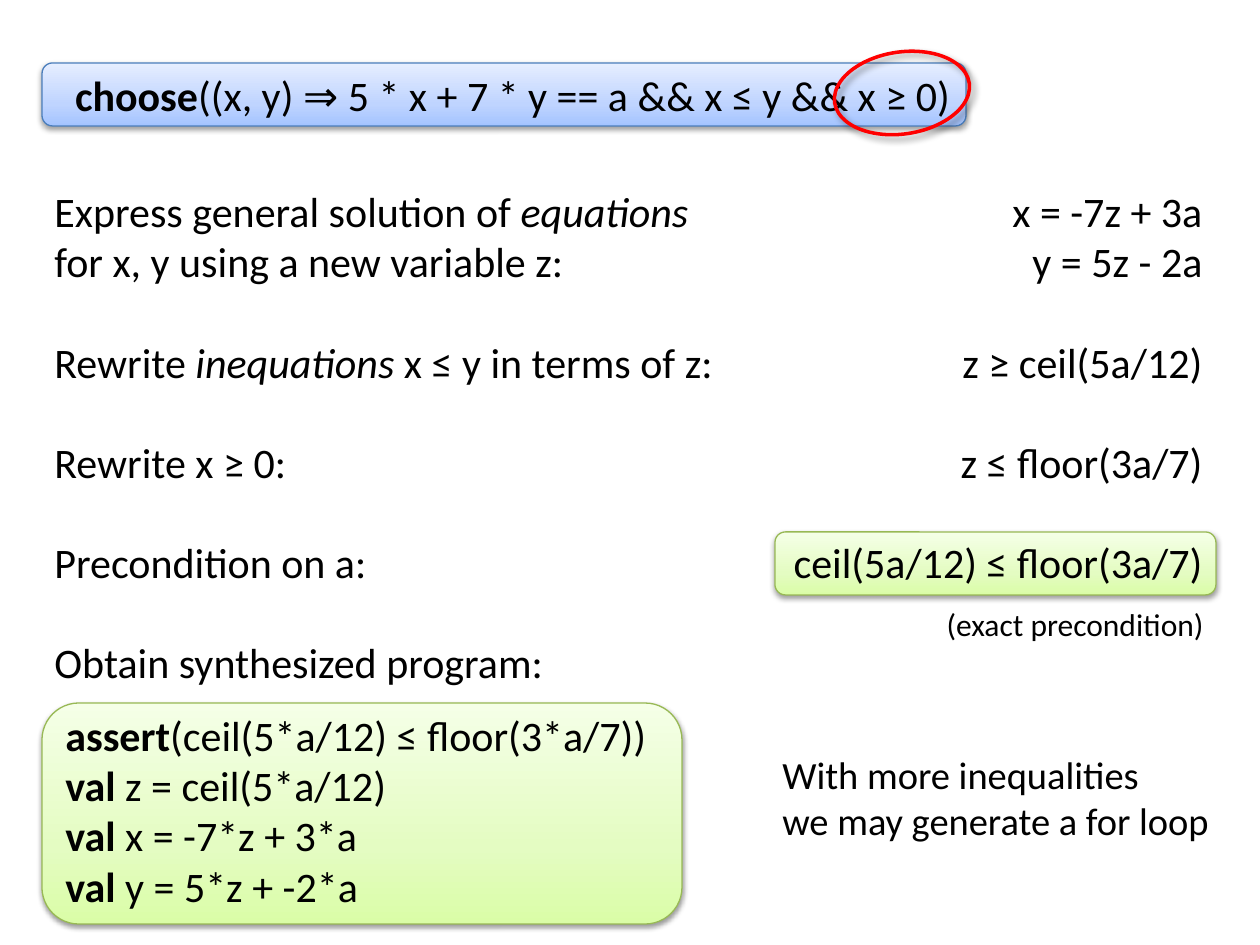
import copy

import pptx
import pptx.dml.color
import pptx.enum.shapes
import pptx.enum.text
import pptx.oxml
import pptx.oxml.ns
import pptx.util

SHAPE = pptx.enum.shapes.MSO_SHAPE
ALIGN = pptx.enum.text.PP_ALIGN
PX_PER_INCH = 126


class Theme:
    font = "Calibri"
    text = "000000"
    body, note, remark = 24, 18, 22
    # Gradients run from the bottom edge to the top edge
    blue = ("A4C4FF", "BFD4FF", "E6EEFF")
    green = ("DAFDA7", "E4FCC2", "F5FFE7")
    stops = (0, 0.35, 1)
    blue_line, green_line, red_line = "4B7EBC", "98B955", "FF0000"
    panel_shadow = dict(opacity=38, blur=3.1, dist=1.6, angle=90)
    ring_shadow = dict(opacity=40, blur=4, dist=3, angle=45)


def px(n):
    return pptx.util.Inches(n / PX_PER_INCH)


def rgb(value):
    return pptx.dml.color.RGBColor.from_string(value)


def add_text(slide, box, paragraphs, size=Theme.body, align=ALIGN.LEFT, wrap=False):
    """Each paragraph is a list of (text, style); style is "", "b" or "i"."""
    tf = slide.shapes.add_textbox(*map(px, box)).text_frame
    tf.word_wrap = wrap
    tf.auto_size = pptx.enum.text.MSO_AUTO_SIZE.SHAPE_TO_FIT_TEXT
    for i, runs in enumerate(paragraphs):
        p = tf.add_paragraph() if i else tf.paragraphs[0]
        p.alignment = align
        for text, style in runs:
            if text == "\n":
                p.add_line_break()
                continue
            r = p.add_run()
            r.text = text
            r.font.name = Theme.font
            r.font.size = pptx.util.Pt(size)
            r.font.bold = style == "b"
            r.font.italic = style == "i"
            r.font.color.rgb = rgb(Theme.text)


def plain(*lines):
    return [[(line, "")] for line in lines]


def add_shadow(sp, opacity, blur, dist, angle):
    sp.shadow.inherit = False
    effects = sp._element.spPr.find(pptx.oxml.ns.qn("a:effectLst"))
    effects.append(pptx.oxml.parse_xml(
        f'<a:outerShdw {pptx.oxml.ns.nsdecls("a")} blurRad="{pptx.util.Pt(blur)}" '
        f'dist="{pptx.util.Pt(dist)}" dir="{angle * 60000}" rotWithShape="0">'
        f'<a:srgbClr val="000000"><a:alpha val="{opacity * 1000}"/></a:srgbClr>'
        '</a:outerShdw>'))


def add_outline(slide, kind, box, line, width, shadow):
    sp = slide.shapes.add_shape(kind, *map(px, box))
    sp.fill.background()
    sp.line.color.rgb = rgb(line)
    sp.line.width = pptx.util.Pt(width)
    add_shadow(sp, **shadow)
    return sp


def add_panel(slide, box, colors, line):
    sp = add_outline(slide, SHAPE.ROUNDED_RECTANGLE, box, line, 0.75, Theme.panel_shadow)
    sp.fill.gradient()
    sp.fill.gradient_angle = 90
    # A new gradient has two stops; the third is a copy of the last
    stops = sp._element.spPr.find(".//" + pptx.oxml.ns.qn("a:gsLst"))
    stops.append(copy.deepcopy(stops[-1]))
    for stop, position, color in zip(sp.fill.gradient_stops, Theme.stops, colors):
        stop.position = position
        stop.color.rgb = rgb(color)


def add_specification(slide):
    add_panel(slide, (42, 63, 924, 63), Theme.blue, Theme.blue_line)
    add_text(slide, (55, 63, 915, 63), [[
        ("choose", "b"),
        ("((x, y) ⇒ 5 * x + 7 * y == a && x ≤ y && x ≥ 0)", ""),
    ]], align=ALIGN.CENTER)


def add_steps(slide):
    left, right, top, pitch, height = 42, 1215, 330, 100, 63

    # The equations step is two lines high
    add_text(slide, (left, 179, 756, 115), [[
        ("Express general solution of ", ""), ("equations ", "i"), ("\n", ""),
        ("for x, y using a new variable z:", ""),
    ]], wrap=True)
    add_text(slide, (right - 217, 179, 217, 115),
             plain("x = -7z + 3a", "y = 5z - 2a"), align=ALIGN.RIGHT)

    # One-line steps: prompt and width, result and width
    steps = [
        ([("Rewrite ", ""), ("inequations", "i"), (" x ≤ y in terms of z:", "")], 692,
         "z ≥ ceil(5a/12)", 267),
        ([("Rewrite x ≥ 0:", "")], 260, "z ≤ floor(3a/7)", 270),
        ([("Precondition on a:", "")], 340, "ceil(5a/12) ≤ floor(3a/7)", 447),
        ([("Obtain synthesized program:", "")], 519, None, 0),
    ]
    add_panel(slide, (775, 532, 441, height), Theme.green, Theme.green_line)
    for i, (prompt, prompt_w, result, result_w) in enumerate(steps):
        y = top + i * pitch
        add_text(slide, (left, y, prompt_w, height), [prompt])
        if result:
            add_text(slide, (right - result_w, y, result_w, height),
                     plain(result), align=ALIGN.RIGHT)
    add_text(slide, (806, 599, 410, 50), plain("(exact precondition)"),
             size=Theme.note, align=ALIGN.RIGHT, wrap=True)


def add_program(slide):
    add_panel(slide, (42, 703, 640, 221), Theme.green, Theme.green_line)
    code = [
        ("assert", "(ceil(5*a/12) ≤ floor(3*a/7))"),
        ("val ", "z = ceil(5*a/12)"),
        ("val ", "x = -7*z + 3*a"),
        ("val ", "y = 5*z + -2*a"),
    ]
    add_text(slide, (53, 703, 640, 217),
             [[(keyword, "b"), (rest, "")] for keyword, rest in code], wrap=True)


def main():
    prs = pptx.Presentation()
    prs.slide_width, prs.slide_height = px(1260), px(945)
    slide = prs.slides.add_slide(prs.slide_layouts[6])

    add_specification(slide)
    add_steps(slide)
    add_program(slide)

    # Ring around the extra condition
    ring = add_outline(slide, SHAPE.OVAL, (834, 52, 136, 82),
                       Theme.red_line, 2, Theme.ring_shadow)
    ring.rotation = 351.7

    # Closing remark
    add_text(slide, (770, 745, 457, 106),
             plain("With more inequalities", "we may generate a for loop"),
             size=Theme.remark)
    prs.save("out.pptx")


if __name__ == "__main__":
    main()
